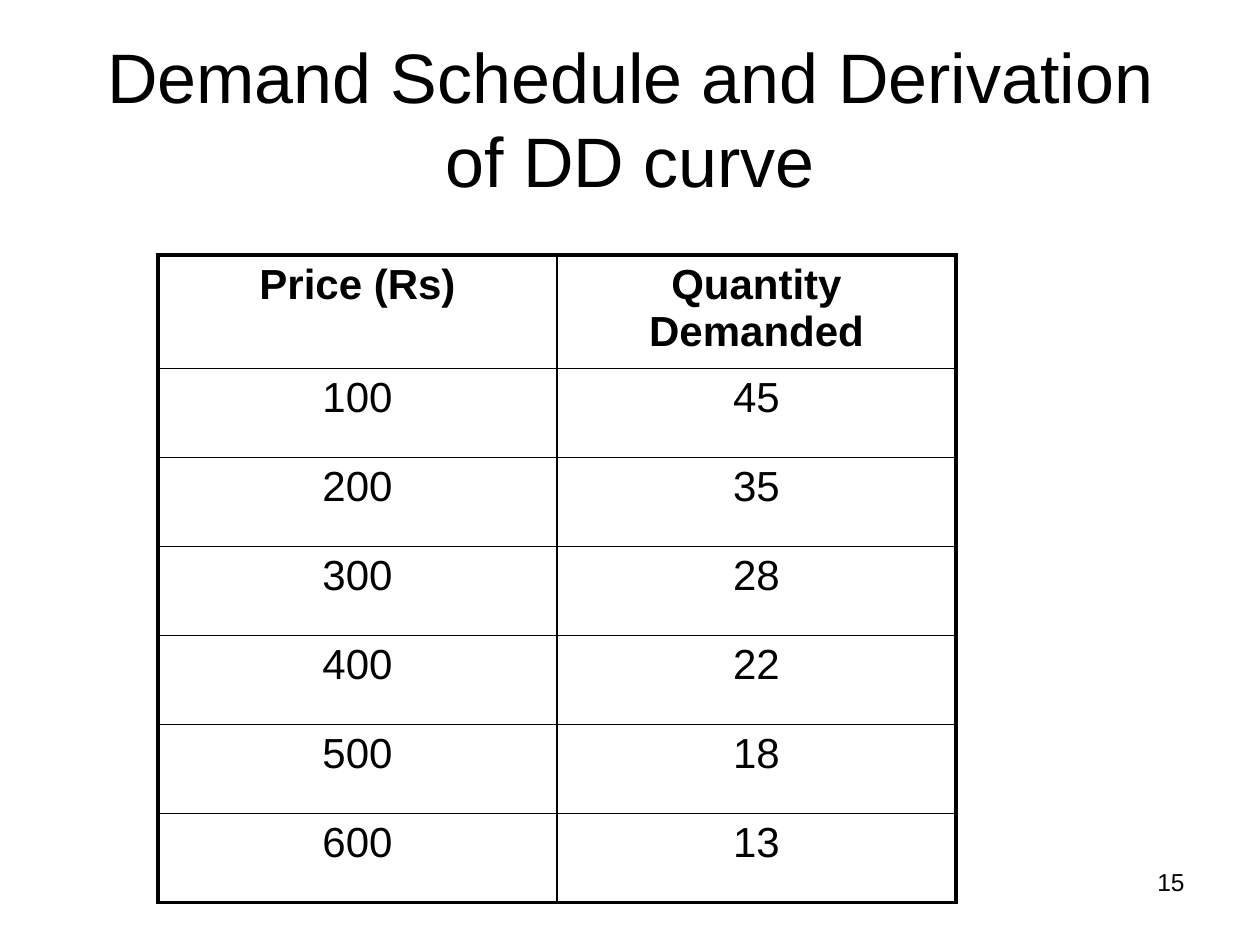
from dataclasses import dataclass

from lxml.etree import SubElement
from pptx import Presentation
from pptx.dml.color import RGBColor
from pptx.enum.text import MSO_ANCHOR, PP_ALIGN
from pptx.oxml.ns import qn
from pptx.slide import Slide
from pptx.table import _Cell
from pptx.text.text import TextFrame
from pptx.util import Emu, Pt

PX_PER_INCH = 126
FONT = "Arial"
COLORS = {"ink": "000000", "paper": "FFFFFF"}
THIN, THICK = 1, 2.25


@dataclass(frozen=True)
class TextStyle:
    size: int
    align: PP_ALIGN
    bold: bool = False


@dataclass(frozen=True)
class Label:
    text: str
    left: int
    top: int
    width: int
    height: int
    style: TextStyle
    anchor: MSO_ANCHOR = MSO_ANCHOR.TOP


@dataclass(frozen=True)
class DemandRow:
    price: str
    quantity: str
    height: int = 89


HEADING = TextStyle(24, PP_ALIGN.CENTER, bold=True)
FIGURE = TextStyle(24, PP_ALIGN.CENTER)
LABELS = [
    Label("15", 903, 861, 294, 66, TextStyle(14, PP_ALIGN.RIGHT)),
    Label("Demand Schedule and Derivation of DD curve", 63, 38, 1134, 158,
          TextStyle(40, PP_ALIGN.CENTER), MSO_ANCHOR.MIDDLE),
]
SCHEDULE = [
    DemandRow("Price (Rs)", "Quantity Demanded", 112),
    DemandRow("100", "45"),
    DemandRow("200", "35"),
    DemandRow("300", "28"),
    DemandRow("400", "22"),
    DemandRow("500", "18"),
    DemandRow("600", "13"),
]
TABLE_LEFT, TABLE_TOP, COLUMN_WIDTH = 158, 255, 399


def px(length: int) -> Emu:
    return Emu(round(length * 914400 / PX_PER_INCH))


def write_text(frame: TextFrame, text: str, style: TextStyle) -> None:
    paragraph = frame.paragraphs[0]
    paragraph.alignment = style.align
    run = paragraph.add_run()
    run.text = text
    run.font.name = FONT
    run.font.size = Pt(style.size)
    run.font.bold = style.bold
    run.font.color.rgb = RGBColor.from_string(COLORS["ink"])


def add_label(slide: Slide, label: Label) -> None:
    shape = slide.shapes.add_textbox(
        px(label.left), px(label.top), px(label.width), px(label.height))
    frame = shape.text_frame
    frame.word_wrap = True
    frame.vertical_anchor = label.anchor
    write_text(frame, label.text, label.style)


def set_borders(cell: _Cell, widths: dict[str, float]) -> None:
    properties = cell._tc.get_or_add_tcPr()
    for position, (side, width) in enumerate(widths.items()):
        line = SubElement(properties, qn(f"a:ln{side}"), w=str(Pt(width)))
        fill = SubElement(line, qn("a:solidFill"))
        SubElement(fill, qn("a:srgbClr"), val=COLORS["ink"])
        properties.insert(position, line)


def add_schedule(slide: Slide, rows: list[DemandRow]) -> None:
    height = sum(row.height for row in rows)
    table = slide.shapes.add_table(
        len(rows), 2, px(TABLE_LEFT), px(TABLE_TOP),
        px(2 * COLUMN_WIDTH), px(height)).table
    table.horz_banding = False
    for column in table.columns:
        column.width = px(COLUMN_WIDTH)
    last = len(rows) - 1
    for row_index, row in enumerate(rows):
        table.rows[row_index].height = px(row.height)
        style = FIGURE if row_index else HEADING
        for column_index, text in enumerate((row.price, row.quantity)):
            cell = table.cell(row_index, column_index)
            cell.fill.solid()
            cell.fill.fore_color.rgb = RGBColor.from_string(COLORS["paper"])
            write_text(cell.text_frame, text, style)
            set_borders(cell, {
                "L": THIN if column_index else THICK,
                "R": THICK if column_index else THIN,
                "T": THIN if row_index else THICK,
                "B": THICK if row_index == last else THIN,
            })


def main() -> None:
    presentation = Presentation()
    presentation.slide_width = px(1260)
    presentation.slide_height = px(945)
    slide = presentation.slides.add_slide(presentation.slide_layouts[6])
    for label in LABELS:
        add_label(slide, label)
    add_schedule(slide, SCHEDULE)
    presentation.save("out.pptx")


if __name__ == "__main__":
    main()
